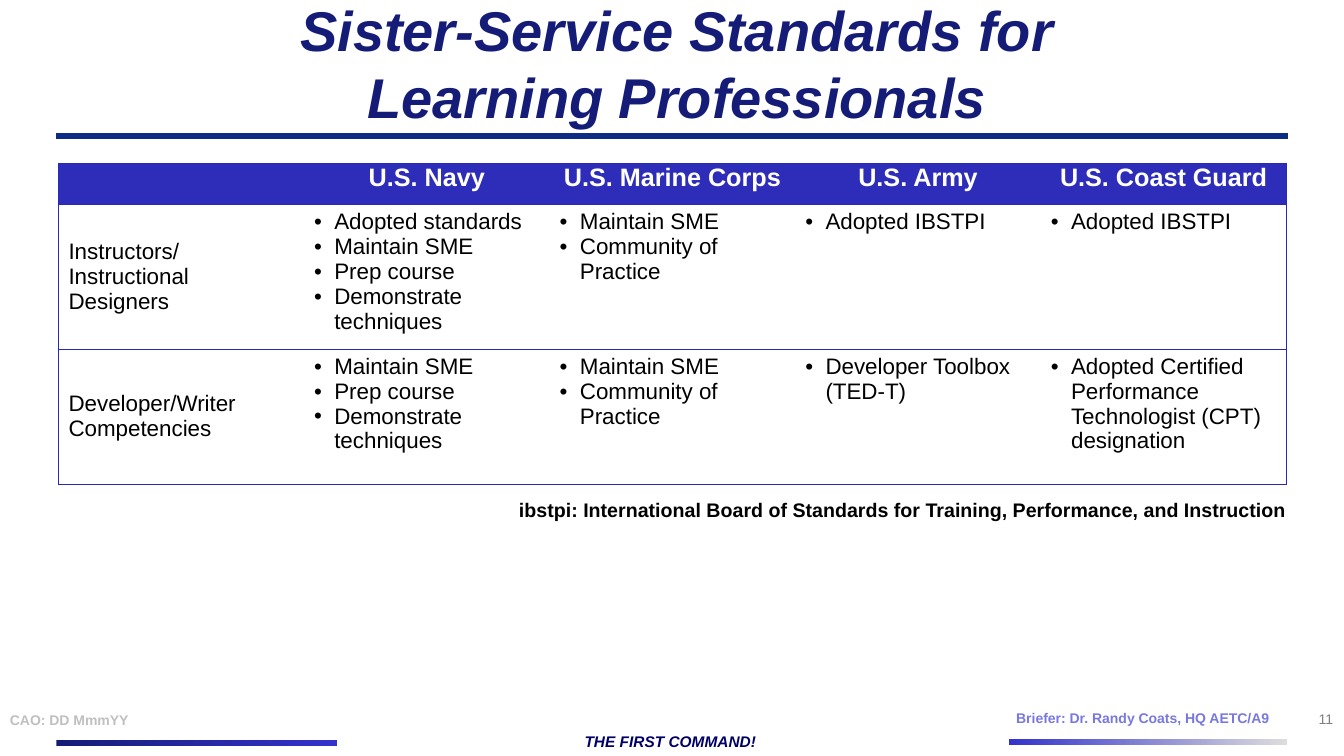
from pptx import Presentation
from pptx.dml.color import RGBColor
from pptx.enum.shapes import MSO_CONNECTOR, MSO_SHAPE
from pptx.enum.text import MSO_ANCHOR, PP_ALIGN
from pptx.oxml import parse_xml
from pptx.oxml.ns import nsdecls
from pptx.util import Inches, Pt

COLORS = {
    "title": "151C77", "rule": "0C2D83", "royal": "3333CC", "silver": "DDDDDD",
    "motto": "000066", "date": "C0C0C0", "briefer": "7878DE", "number": "808080",
    "header": "2D2DB9", "border": "2929B8", "white": "FFFFFF", "black": "000000",
}
HEADERS = ["", "U.S. Navy", "U.S. Marine Corps", "U.S. Army", "U.S. Coast Guard"]
STANDARDS = [
    (["Instructors/", "Instructional Designers"],
     ["Adopted standards", "Maintain SME", "Prep course", "Demonstrate techniques"],
     ["Maintain SME", "Community of Practice"],
     ["Adopted IBSTPI"],
     ["Adopted IBSTPI"]),
    (["Developer/Writer Competencies"],
     ["Maintain SME", "Prep course", "Demonstrate techniques"],
     ["Maintain SME", "Community of Practice"],
     ["Developer Toolbox (TED-T)"],
     ["Adopted Certified Performance Technologist (CPT) designation"]),
]


class SlideBuilder:
    """Draws styled elements on one slide, with lengths in percent of its size."""

    def __init__(self, prs, font="Arial"):
        self.width, self.height = prs.slide_width, prs.slide_height
        self.font = font
        self.s = prs.slides.add_slide(prs.slide_layouts[6])

    def x(self, share):
        return int(self.width * share / 100)

    def y(self, share):
        return int(self.height * share / 100)

    def box(self, left, top, width, height):
        return self.x(left), self.y(top), self.x(width), self.y(height)

    def color(self, name):
        return RGBColor.from_string(COLORS[name])

    def fill_text(self, tf, lines, size, color, align=PP_ALIGN.LEFT, bullet=False, **look):
        for i, line in enumerate(lines):
            p = tf.paragraphs[0] if i == 0 else tf.add_paragraph()
            p.alignment = align
            if bullet:
                pPr = p._p.get_or_add_pPr()
                pPr.set("marL", str(Inches(0.2)))
                pPr.set("indent", str(-Inches(0.2)))
                pPr.append(parse_xml(f'<a:buFont {nsdecls("a")} typeface="{self.font}"/>'))
                pPr.append(parse_xml(f'<a:buChar {nsdecls("a")} char="•"/>'))
            r = p.add_run()
            r.text = line
            for key, value in {"name": self.font, "size": Pt(size), **look}.items():
                setattr(r.font, key, value)
            r.font.color.rgb = self.color(color)

    def text(self, place, line, size, color, frame=None, **look):
        tf = self.s.shapes.add_textbox(*self.box(*place)).text_frame
        settings = {"word_wrap": True, "vertical_anchor": MSO_ANCHOR.MIDDLE, **(frame or {})}
        for key, value in settings.items():
            setattr(tf, key, value)
        self.fill_text(tf, [line], size, color, **look)

    def rule(self, left, right, top, color, weight):
        line = self.s.shapes.add_connector(
            MSO_CONNECTOR.STRAIGHT, self.x(left), self.y(top), self.x(right), self.y(top))
        line.line.color.rgb = self.color(color)
        line.line.width = Pt(weight)
        line._element.spPr.append(parse_xml(f'<a:effectLst {nsdecls("a")}/>'))

    def gradient_bar(self, place, *colors):
        bar = self.s.shapes.add_shape(MSO_SHAPE.RECTANGLE, *self.box(*place))
        bar.shadow.inherit = False
        bar.line.fill.background()
        bar.fill.gradient()
        bar.fill.gradient_angle = 0
        for stop, position, color in zip(bar.fill.gradient_stops, (0, 1), colors):
            stop.position = position
            stop.color.rgb = self.color(color)

    def borders(self, cell, sides):
        for i, side in enumerate("LRTB"):
            paint = (f'<a:solidFill><a:srgbClr val="{COLORS["border"]}"/></a:solidFill>'
                     if side in sides else "<a:noFill/>")
            cell._tc.get_or_add_tcPr().insert(i, parse_xml(
                f'<a:ln{side} {nsdecls("a")} w="{Pt(0.75)}">{paint}</a:ln{side}>'))

    def table(self, place, headers, records, head_height):
        left, top, width, height = place
        rows, cols = len(records) + 1, len(headers)
        table = self.s.shapes.add_table(rows, cols, *self.box(*place)).table
        table.first_row = table.horz_banding = False
        for column in table.columns:
            column.width = self.x(width / cols)
        for i, row in enumerate(table.rows):
            row.height = self.y((height - head_height) / len(records) if i else head_height)
        for j, header in enumerate(headers):
            edges = "L" * (j == 0) + "R" * (j == cols - 1)
            cell = table.cell(0, j)
            cell.fill.solid()
            cell.fill.fore_color.rgb = self.color("header")
            cell.margin_left = cell.margin_right = Inches(0.07)
            cell.margin_top = cell.margin_bottom = 0
            if header:
                self.fill_text(cell.text_frame, [header], 18, "white", PP_ALIGN.CENTER, bold=True)
            self.borders(cell, edges + "TB")
            for i, record in enumerate(records, 1):
                cell = table.cell(i, j)
                cell.fill.background()
                cell.vertical_anchor = MSO_ANCHOR.TOP if j else MSO_ANCHOR.MIDDLE
                self.fill_text(cell.text_frame, record[j], 16, "black", bullet=j > 0)
                self.borders(cell, edges + "TB")


def main():
    prs = Presentation()
    prs.slide_width, prs.slide_height = Inches(13.33), Inches(7.5)
    slide = SlideBuilder(prs)
    slide.rule(4.2, 95.87, 18, "rule", 4.5)
    slide.gradient_bar((4.2, 97.87, 20.85, 0.8), "title", "royal")
    slide.gradient_bar((75.09, 97.73, 20.7, 0.8), "royal", "silver")
    slide.text((24.68, 96.27, 50.41, 3.6), "THE FIRST COMMAND!", 11, "motto",
               {"vertical_anchor": MSO_ANCHOR.TOP, "margin_top": Inches(0.04)},
               align=PP_ALIGN.CENTER, bold=True, italic=True)
    slide.text((0, 92.93, 13.58, 4.67), "CAO: DD MmmYY", 10, "date", bold=True)
    slide.text((74.87, 92.67, 21.98, 4.67), "Briefer: Dr. Randy Coats, HQ AETC/A9",
               10, "briefer", bold=True)
    slide.text((18.23, 0, 64.22, 16.67), "Sister-Service Standards for Learning Professionals",
               40, "title", align=PP_ALIGN.CENTER, bold=True, italic=True)
    slide.table((4.35, 21.6, 91.37, 41.2), HEADERS, STANDARDS, 5.47)
    slide.text((87.4, 92.93, 12.53, 4.4), "11", 10, "number", align=PP_ALIGN.RIGHT)
    slide.text((37.88, 65.2, 59.26, 4.53),
               "ibstpi: International Board of Standards for Training, Performance, and Instruction",
               14, "black", {"word_wrap": False, "vertical_anchor": MSO_ANCHOR.TOP}, bold=True)
    prs.save("out.pptx")


if __name__ == "__main__":
    main()
